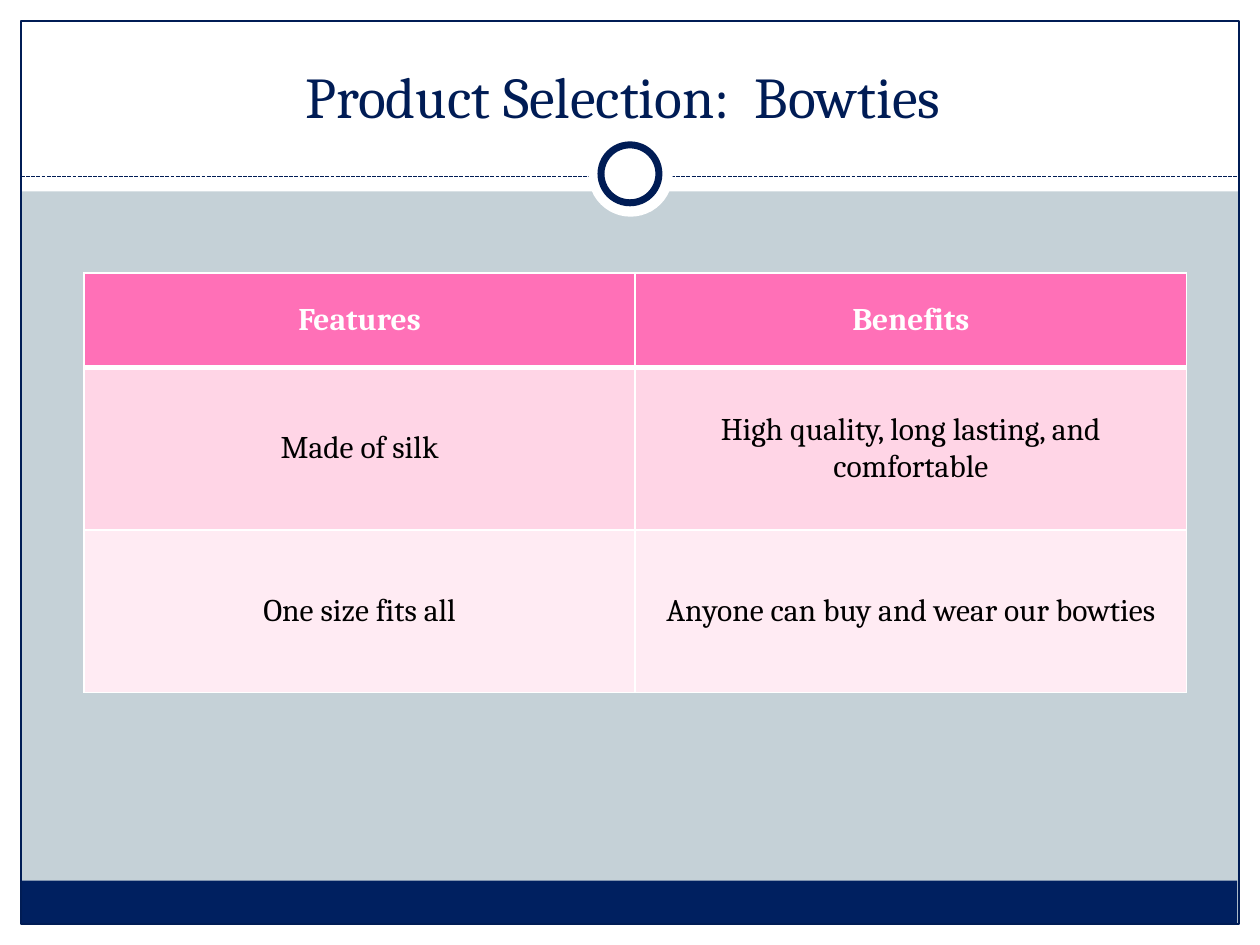
"""Build the bowtie product selection slide with its features and benefits table."""
from lxml import etree
from pptx import Presentation
from pptx.dml.color import RGBColor
from pptx.enum.dml import MSO_LINE
from pptx.enum.shapes import MSO_CONNECTOR, MSO_SHAPE
from pptx.enum.text import MSO_ANCHOR, PP_ALIGN
from pptx.oxml.ns import qn
from pptx.util import Inches, Pt

RECTANGLE, OVAL = MSO_SHAPE.RECTANGLE, MSO_SHAPE.OVAL
STRAIGHT = MSO_CONNECTOR.STRAIGHT
DASH = MSO_LINE.SQUARE_DOT
CENTER = PP_ALIGN.CENTER
MIDDLE, BOTTOM = MSO_ANCHOR.MIDDLE, MSO_ANCHOR.BOTTOM
FONT = "Cambria"
WIDTH, HEIGHT = 10, 7.5
MARGIN = 1 / 6
COLORS = {
    "background": "C5D1D7", "white": "FFFFFF", "black": "000000",
    "navy": "001C55", "footer": "002060",
    "header": "FF70B7", "band_dark": "FFD5E6", "band_light": "FFEBF3",
}


def color(name):
    return RGBColor.from_string(COLORS[name])


def write_text(frame, text, size, color_name, bold=False):
    paragraph = frame.paragraphs[0]
    paragraph.alignment = CENTER
    run = paragraph.add_run()
    run.text = text
    run.font.name = FONT
    run.font.size = Pt(size)
    run.font.bold = bold
    run.font.color.rgb = color(color_name)


presentation = Presentation()
presentation.slide_width = Inches(WIDTH)
presentation.slide_height = Inches(HEIGHT)
slide = presentation.slides.add_slide(presentation.slide_layouts[6])
slide.background.fill.solid()
slide.background.fill.fore_color.rgb = color("background")

panels = [
    (RECTANGLE, (0, HEIGHT - MARGIN, WIDTH, MARGIN), "white", None),
    (RECTANGLE, (0, 0, WIDTH, 1.52), "white", None),
    (RECTANGLE, (0, 0, MARGIN, HEIGHT), "white", None),
    (RECTANGLE, (WIDTH - MARGIN, 0, MARGIN, HEIGHT), "white", None),
    (RECTANGLE, (0.16, 6.99, 9.66, 0.34), "footer", None),
    (RECTANGLE, (MARGIN, MARGIN, WIDTH - 2 * MARGIN, HEIGHT - 2 * MARGIN), None, 0.75),
    (None, (MARGIN, 1.4, WIDTH - MARGIN, 1.4), None, 0.75),
    (OVAL, (4.67, 1.05, 0.67, 0.67), "white", None),
    (OVAL, (4.77, 1.15, 0.46, 0.46), "white", 4),
]
for preset, position, fill, line_width in panels:
    lengths = [Inches(value) for value in position]
    if preset is None:
        shape = slide.shapes.add_connector(STRAIGHT, *lengths)
        shape.line.dash_style = DASH
        etree.SubElement(shape._element.spPr, qn("a:effectLst"))
    else:
        shape = slide.shapes.add_shape(preset, *lengths)
        shape.shadow.inherit = False
        if fill:
            shape.fill.solid()
            shape.fill.fore_color.rgb = color(fill)
        else:
            shape.fill.background()
    if line_width:
        shape.line.color.rgb = color("navy")
        shape.line.width = Pt(line_width)
    else:
        shape.line.fill.background()

title = slide.shapes.add_textbox(Inches(0.33), Inches(0.25), Inches(9.33), Inches(0.83))
title.text_frame.word_wrap = True
title.text_frame.vertical_anchor = BOTTOM
write_text(title.text_frame, "Product Selection:  Bowties ", 33, "navy")

rows = [
    (0.75, "header", "white", ("Features", "Benefits")),
    (1.29, "band_dark", "black", ("Made of silk", "High quality, long lasting, and comfortable")),
    (1.29, "band_light", "black", ("One size fits all", "Anyone can buy and wear our bowties")),
]
table = slide.shapes.add_table(
    len(rows), 2, Inches(4 * MARGIN), Inches(13 * MARGIN), Inches(8.75), Inches(3.33)).table
for row_index, (height, fill, text_color, texts) in enumerate(rows):
    table.rows[row_index].height = Inches(height)
    border_widths = {
        "lnL": 1, "lnR": 1,
        "lnT": 3 if row_index == 1 else 1,
        "lnB": 3 if row_index == 0 else 1,
    }
    for column_index, text in enumerate(texts):
        cell = table.cell(row_index, column_index)
        cell.vertical_anchor = MIDDLE
        write_text(cell.text_frame, text, 18, text_color, bold=row_index == 0)
        properties = cell._tc.get_or_add_tcPr()
        for side, width in border_widths.items():
            border = etree.SubElement(properties, qn(f"a:{side}"), w=str(Pt(width)))
            solid_fill = etree.SubElement(border, qn("a:solidFill"))
            etree.SubElement(solid_fill, qn("a:srgbClr"), val=COLORS["white"])
        cell.fill.solid()
        cell.fill.fore_color.rgb = color(fill)

presentation.save("out.pptx")
